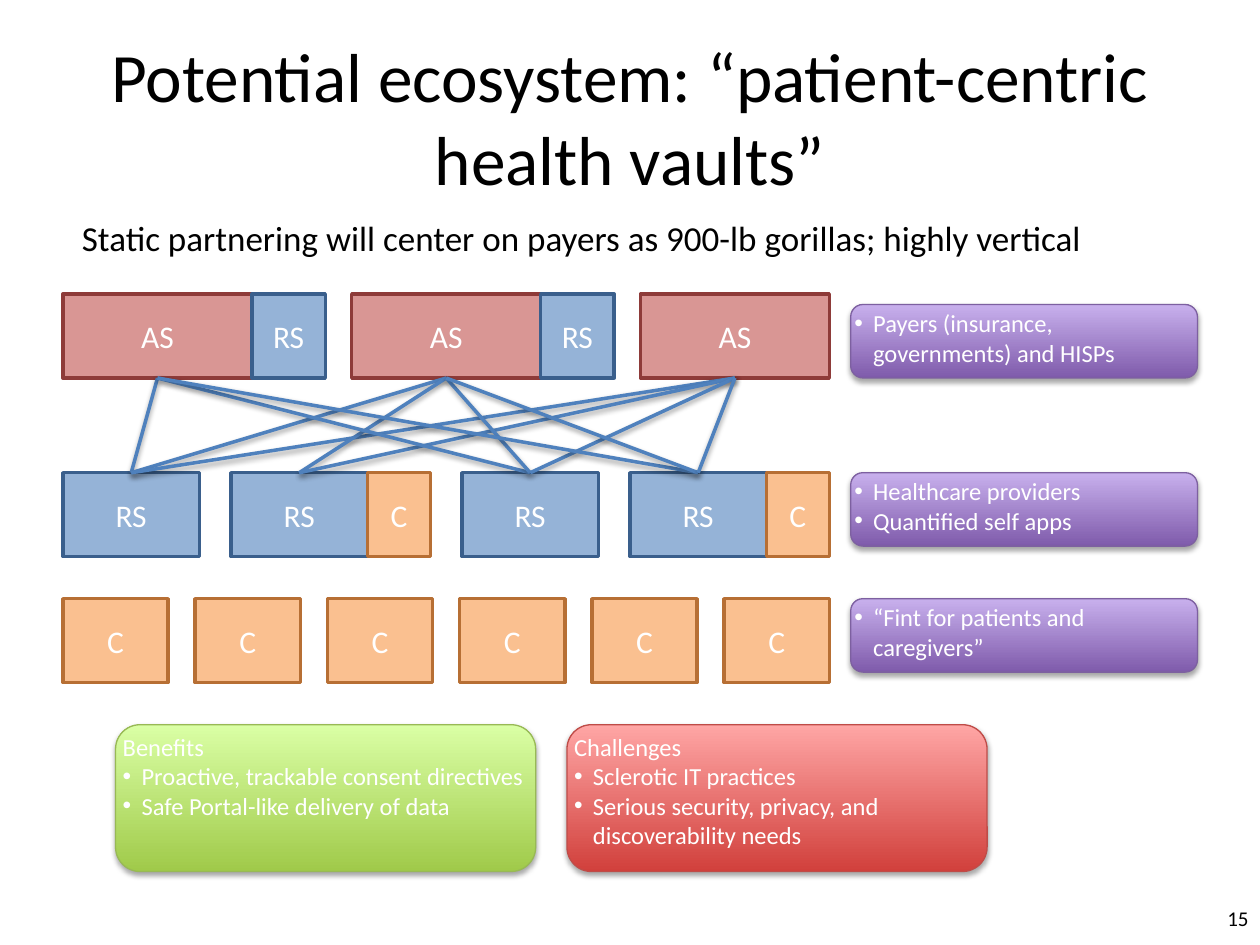
from lxml.etree import SubElement
from pptx import Presentation
from pptx.dml.color import RGBColor
from pptx.enum.shapes import MSO_CONNECTOR, MSO_SHAPE
from pptx.enum.text import MSO_ANCHOR, MSO_AUTO_SIZE, PP_ALIGN
from pptx.oxml.ns import qn
from pptx.util import Cm, Pt

BLACK = RGBColor(0x00, 0x00, 0x00)
WHITE = RGBColor(0xFF, 0xFF, 0xFF)
LINK_BLUE = RGBColor(0x4F, 0x81, 0xBD)
ROLE_COLOURS = {
    "AS": (RGBColor(0xD9, 0x96, 0x94), RGBColor(0x8E, 0x3B, 0x39)),
    "RS": (RGBColor(0x95, 0xB3, 0xD7), RGBColor(0x3A, 0x5F, 0x8C)),
    "C": (RGBColor(0xFA, 0xC0, 0x90), RGBColor(0xB7, 0x6F, 0x34)),
}
PURPLE = (RGBColor(0x7F, 0x5B, 0xAB), RGBColor(0xC8, 0xB0, 0xED), RGBColor(0x7D, 0x60, 0xA0))
GREEN = (RGBColor(0xA0, 0xCA, 0x4A), RGBColor(0xDA, 0xFF, 0xA5), RGBColor(0x98, 0xB9, 0x55))
RED = (RGBColor(0xD1, 0x40, 0x3C), RGBColor(0xFF, 0xA6, 0xA5), RGBColor(0xBF, 0x4C, 0x48))

TITLE = "Potential ecosystem: “patient-centric health vaults”"
SUBTITLE = "Static partnering will center on payers as 900-lb gorillas; highly vertical"
PAGE_NUMBER = "15"

TIERS = [
    {"top": 5.93, "widths": {"AS": 3.81, "RS": 1.48},
     "groups": [["AS", "RS"], ["AS", "RS"], ["AS"]]},
    {"top": 9.53, "widths": {"RS": 2.75, "C": 1.27},
     "groups": [["RS"], ["RS", "C"], ["RS"], ["RS", "C"]]},
    {"top": 12.07, "widths": {"C": 2.12}, "groups": [["C"]] * 6},
]
PARTNERS = [(0, 1, 2), (1, 2), (0, 1, 2), (0, 1, 2)]

TIER_NOTES = [
    (6.14, ["Payers (insurance, governments) and HISPs"]),
    (9.53, ["Healthcare providers", "Quantified self apps"]),
    (12.07, ["“Fint for patients and caregivers”"]),
]
ASSESSMENTS = [
    (2.33, GREEN, "Benefits",
     ["Proactive, trackable consent directives", "Safe Portal-like delivery of data"]),
    (11.43, RED, "Challenges",
     ["Sclerotic IT practices", "Serious security, privacy, and discoverability needs"]),
]

TIER_LEFT, TIER_WIDTH, BOX_HEIGHT = 1.27, 15.45, 1.69
NOTE_LEFT, NOTE_WIDTH, NOTE_HEIGHT = 17.15, 6.99, 1.48
ASSESSMENT_TOP, ASSESSMENT_WIDTH, ASSESSMENT_HEIGHT = 14.61, 8.47, 2.96
BULLET_INDENT = Cm(0.38)
NO_MARGINS = dict.fromkeys(("margin_left", "margin_top", "margin_right", "margin_bottom"), 0)


def apply(target, formats):
    for key, value in formats.items():
        setattr(target, key, value)


def write(paragraph, text, size, colour, align=PP_ALIGN.LEFT):
    paragraph.text = text
    paragraph.alignment = align
    apply(paragraph.font, {"name": "Calibri", "size": Pt(size)})
    paragraph.font.color.rgb = colour


def add_shadow(element, opacity, blur, distance):
    effects = element.spPr.find(qn("a:effectLst"))
    if effects is None:
        effects = SubElement(element.spPr, qn("a:effectLst"))
    shadow = SubElement(effects, qn("a:outerShdw"), blurRad=str(Pt(blur)),
                        dist=str(Pt(distance)), dir="5400000", rotWithShape="0")
    black = SubElement(shadow, qn("a:srgbClr"), val="000000")
    SubElement(black, qn("a:alpha"), val=str(opacity * 1000))


def add_shape(slide, preset, left, top, width, height, outline, weight):
    shape = slide.shapes.add_shape(preset, Cm(left), Cm(top), Cm(width), Cm(height))
    shape.line.color.rgb = outline
    shape.line.width = Pt(weight)
    shape.shadow.inherit = False
    shape.text_frame.word_wrap = True
    return shape


def add_role(slide, role, left, top, width):
    fill, outline = ROLE_COLOURS[role]
    box = add_shape(slide, MSO_SHAPE.RECTANGLE, left, top, width, BOX_HEIGHT, outline, 2)
    box.fill.solid()
    box.fill.fore_color.rgb = fill
    box.text_frame.vertical_anchor = MSO_ANCHOR.MIDDLE
    write(box.text_frame.paragraphs[0], role, 18, WHITE, PP_ALIGN.CENTER)
    return box


def add_tier(slide, top, widths, groups):
    used = sum(widths[role] for group in groups for role in group)
    gap = (TIER_WIDTH - used) / (len(groups) - 1)
    left, leaders = TIER_LEFT, []
    for group in groups:
        boxes = []
        for role in group:
            boxes.append(add_role(slide, role, left, top, widths[role]))
            left += widths[role]
        leaders.append(boxes[0])
        left += gap
    return leaders


def add_link(slide, resource, authority):
    link = slide.shapes.add_connector(MSO_CONNECTOR.STRAIGHT, 0, 0, 0, 0)
    link.begin_connect(resource, 0)
    link.end_connect(authority, 2)
    link.line.color.rgb = LINK_BLUE
    link.line.width = Pt(2)
    add_shadow(link._element, 38, 3.1, 1.6)


def add_card(slide, left, top, width, height, colours, bullets, heading=None):
    low, high, outline = colours
    card = add_shape(slide, MSO_SHAPE.ROUNDED_RECTANGLE, left, top, width, height, outline, 0.75)
    card.fill.gradient()
    card.fill.gradient_angle = 90
    for stop, colour, position in zip(card.fill.gradient_stops, (low, high), (0, 1)):
        stop.color.rgb = colour
        stop.position = position
    add_shadow(card._element, 35, 3.1, 1.8)
    frame = card.text_frame
    apply(frame, {**NO_MARGINS, "vertical_anchor": MSO_ANCHOR.TOP})
    lines = ([heading] if heading else []) + bullets
    for index, text in enumerate(lines):
        paragraph = frame.add_paragraph() if index else frame.paragraphs[0]
        if text != heading:
            properties = paragraph._p.get_or_add_pPr()
            apply_indent = {"marL": BULLET_INDENT, "indent": -BULLET_INDENT}
            for key, value in apply_indent.items():
                properties.set(key, str(value))
            SubElement(properties, qn("a:buFont"), typeface="Arial")
            SubElement(properties, qn("a:buChar"), char="•")
        write(paragraph, text, 14, WHITE)


def add_label(slide, text, left, top, width, height, size, align, wrap):
    label = slide.shapes.add_textbox(Cm(left), Cm(top), Cm(width), Cm(height))
    label.text_frame.word_wrap = wrap
    write(label.text_frame.paragraphs[0], text, size, BLACK, align)


def main():
    deck = Presentation()
    apply(deck, {"slide_width": Cm(25.4), "slide_height": Cm(19.05)})
    slide = deck.slides.add_slide(deck.slide_layouts[5])

    title = slide.shapes.title
    apply(title, {"left": Cm(1.27), "top": Cm(0.76), "width": Cm(22.86), "height": Cm(3.18)})
    apply(title.text_frame, {"vertical_anchor": MSO_ANCHOR.MIDDLE, "word_wrap": True,
                             "auto_size": MSO_AUTO_SIZE.NONE})
    write(title.text_frame.paragraphs[0], TITLE, 39.6, BLACK, PP_ALIGN.CENTER)
    add_label(slide, SUBTITLE, 1.4, 4.24, 21.59, 1.07, 20, PP_ALIGN.LEFT, True)
    add_label(slide, PAGE_NUMBER, 24.43, 18.14, 0.99, 1.02, 12, PP_ALIGN.RIGHT, False)

    authorities, resources, _ = [add_tier(slide, **tier) for tier in TIERS]
    for resource, partners in zip(resources, PARTNERS):
        for partner in partners:
            add_link(slide, resource, authorities[partner])

    for top, bullets in TIER_NOTES:
        add_card(slide, NOTE_LEFT, top, NOTE_WIDTH, NOTE_HEIGHT, PURPLE, bullets)
    for left, colours, heading, bullets in ASSESSMENTS:
        add_card(slide, left, ASSESSMENT_TOP, ASSESSMENT_WIDTH, ASSESSMENT_HEIGHT,
                 colours, bullets, heading)

    deck.save("out.pptx")


if __name__ == "__main__":
    main()
